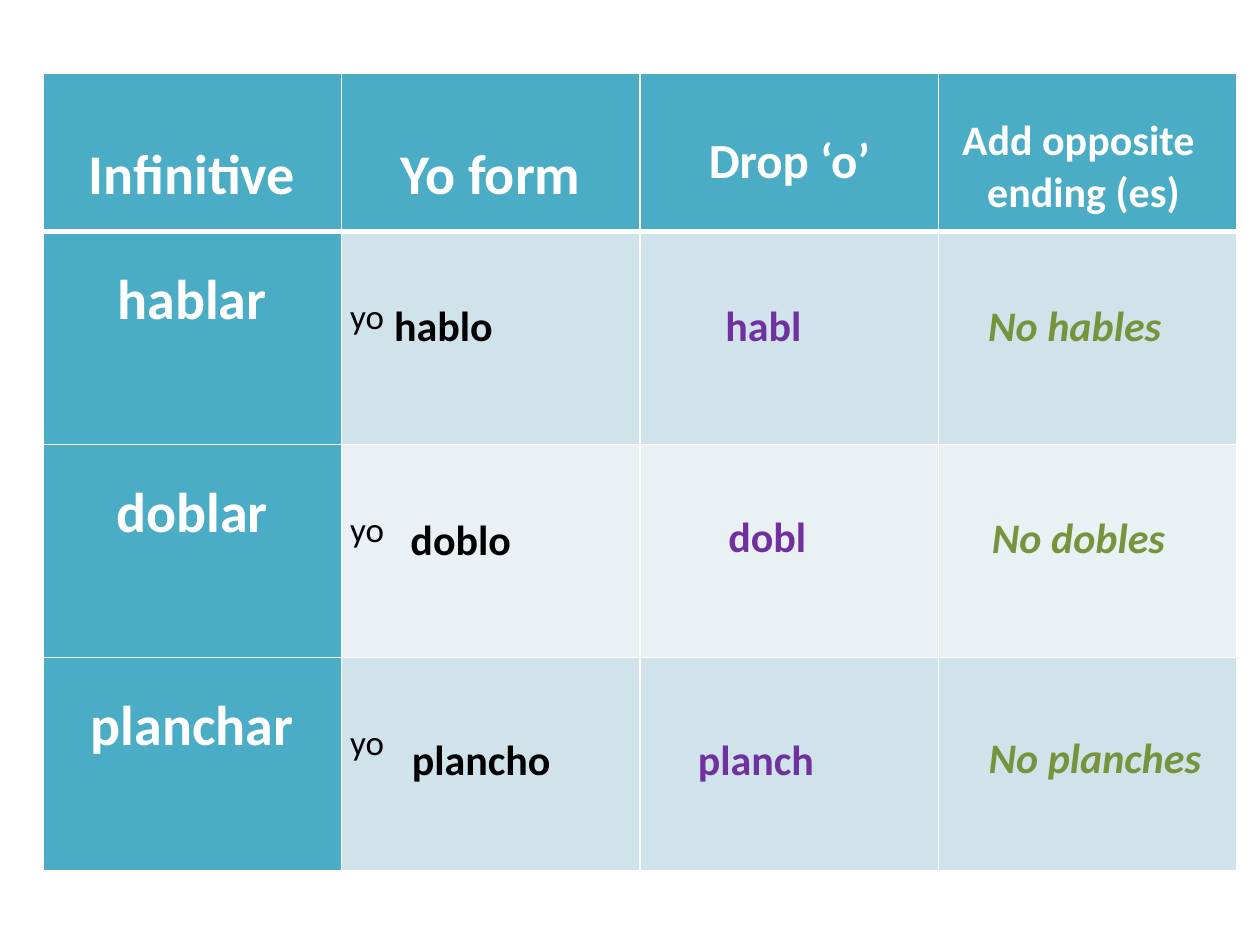
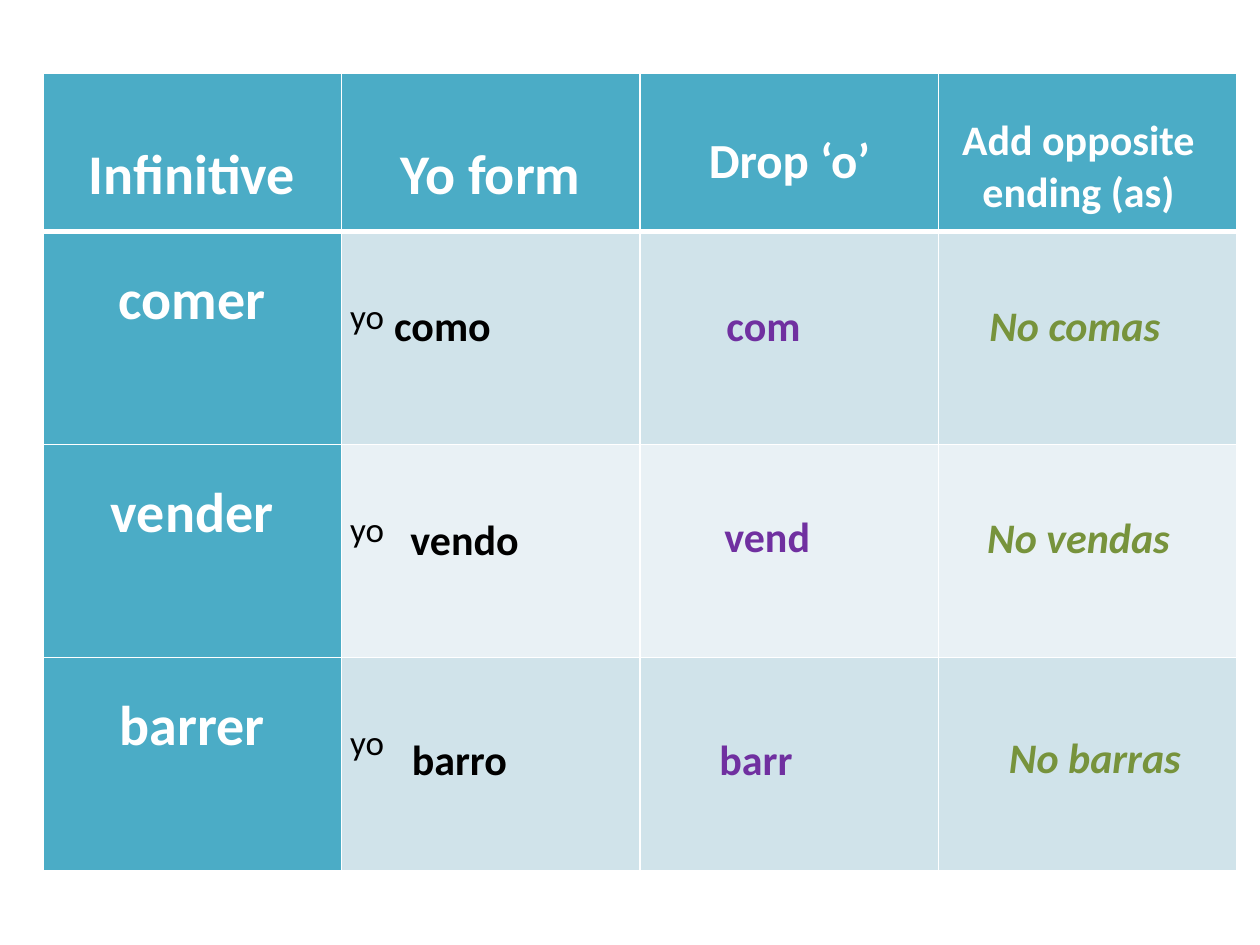
"""Build two slides on negative tú commands: one for -ar verbs, one for -er verbs."""
from lxml.etree import SubElement
from pptx import Presentation
from pptx.dml.color import RGBColor
from pptx.enum.text import MSO_AUTO_SIZE as AutoSize, PP_ALIGN as Align
from pptx.oxml.ns import qn
from pptx.util import Inches, Pt

COLORS = {
    "header": "4BACC6", "band_dark": "D0E3EA", "band_light": "E9F1F5",
    "white": "FFFFFF", "black": "000000", "stem": "7030A0", "command": "77933C",
}
HEADERS = [("Infinitive", 32, 0.54), ("Yo form", 32, 0.54), ("Drop ‘o’", 28, 0.47)]
ROW_HEIGHTS = [1.26, 1.69, 1.69, 1.69]
COLUMN_WIDTH = 2.37
FORM_STYLES = [("black", Align.LEFT, False), ("stem", Align.CENTER, False),
               ("command", Align.CENTER, True)]
FORM_SPOTS = [
    [(3.03, 2.33), (5.08, 2.33), (7.55, 2.33)],
    [(3.16, 4.03), (5.11, 4.0), (7.58, 4.01)],
    [(3.17, 5.77), (5.02, 5.77), (7.71, 5.76)],
]
LESSONS = [
    ("ending (es)", 0.08, [
        ("hablar", "hablo", "habl", "No hables"),
        ("doblar", "doblo", "dobl", "No dobles"),
        ("planchar", "plancho", "planch", "No planches"),
    ]),
    ("ending (as)", 0, [
        ("comer", "como", "com", "No comas"),
        ("vender", "vendo", "vend", "No vendas"),
        ("barrer", "barro", "barr", "No barras"),
    ]),
]


class VerbDeck:
    """Holds the shared style and the current slide."""

    def __init__(self):
        self.deck = Presentation()
        self.deck.slide_width, self.deck.slide_height = Inches(10), Inches(7.5)
        self.font = "Calibri"
        self.slide = None

    def new_slide(self):
        """Start a blank slide."""
        self.slide = self.deck.slides.add_slide(self.deck.slide_layouts[6])

    def put_run(self, paragraph, text, size, color, align=Align.CENTER, bold=True,
                italic=False, spacing=None, indents=(0, 0)):
        """Put one run into a paragraph."""
        paragraph.alignment = align
        if spacing:
            paragraph.line_spacing = spacing
        for side, indent in zip(("marL", "marR"), indents):
            if indent:
                paragraph._p.get_or_add_pPr().set(side, str(Inches(indent)))
        run = paragraph.add_run()
        run.text = text
        font = run.font
        font.name, font.size, font.bold, font.italic = self.font, Pt(size), bold, italic
        font.color.rgb = RGBColor.from_string(COLORS[color])

    def style_cell(self, cell, fill, top_width=1, bottom_width=1):
        """Give a cell white borders, a fill and insets."""
        properties = cell._tc.get_or_add_tcPr()
        widths = {"a:lnL": 1, "a:lnR": 1, "a:lnT": top_width, "a:lnB": bottom_width}
        for edge, width in widths.items():
            line = SubElement(properties, qn(edge), w=str(Pt(width)))
            paint = SubElement(line, qn("a:solidFill"))
            SubElement(paint, qn("a:srgbClr"), val=COLORS["white"])
        cell.fill.solid()
        cell.fill.fore_color.rgb = RGBColor.from_string(COLORS[fill])
        cell.margin_left = cell.margin_right = Inches(0.07)
        cell.margin_top = cell.margin_bottom = 0

    def verb_table(self, ending, ending_indent, infinitives):
        """Add the table with its headers and infinitives."""
        table = self.slide.shapes.add_table(
            4, 4, Inches(0.34), Inches(0.58),
            Inches(4 * COLUMN_WIDTH), Inches(sum(ROW_HEIGHTS))).table
        table.horz_banding = False
        for column in table.columns:
            column.width = Inches(COLUMN_WIDTH)
        for index, (row, height) in enumerate(zip(table.rows, ROW_HEIGHTS)):
            row.height = Inches(height)
            band = "band_dark" if index % 2 else "band_light"
            for position, cell in enumerate(row.cells):
                self.style_cell(cell, "header" if index == 0 or position == 0 else band,
                                top_width=3 if index == 1 else 1,
                                bottom_width=3 if index == 0 else 1)

        for position, (title, size, gap) in enumerate(HEADERS):
            header = table.cell(0, position)
            header.margin_top = Inches(gap)
            self.put_run(header.text_frame.paragraphs[0], title, size, "white")
        header = table.cell(0, 3)
        header.margin_top = Inches(0.34)
        frame = header.text_frame
        self.put_run(frame.paragraphs[0], "Add opposite", 24, "white", indents=(0, 0.15))
        self.put_run(frame.add_paragraph(), ending, 24, "white", indents=(ending_indent, 0))

        for index, infinitive in enumerate(infinitives, 1):
            self.put_run(table.cell(index, 0).text_frame.paragraphs[0], infinitive, 32,
                         "white", spacing=1.5)
            pronoun = table.cell(index, 1)
            pronoun.margin_top = Inches(0.34)
            self.put_run(pronoun.text_frame.paragraphs[0], "yo", 20, "black",
                         align=Align.LEFT, bold=False, spacing=1.5)

    def verb_form(self, text, spot, color, align, italic):
        """Add one verb form over the table."""
        left, top = spot
        frame = self.slide.shapes.add_textbox(
            Inches(left), Inches(top), Inches(1.96), Inches(0.5)).text_frame
        frame.word_wrap = True
        frame.auto_size = AutoSize.SHAPE_TO_FIT_TEXT
        self.put_run(frame.paragraphs[0], text, 24, color, align=align, italic=italic)


def main():
    """Build and save both lessons."""
    lesson = VerbDeck()
    for ending, ending_indent, verbs in LESSONS:
        lesson.new_slide()
        lesson.verb_table(ending, ending_indent, [verb[0] for verb in verbs])
        for (_, *forms), spots in zip(verbs, FORM_SPOTS):
            for form, spot, style in zip(forms, spots, FORM_STYLES):
                lesson.verb_form(form, spot, *style)
    lesson.deck.save("out.pptx")


if __name__ == "__main__":
    main()
